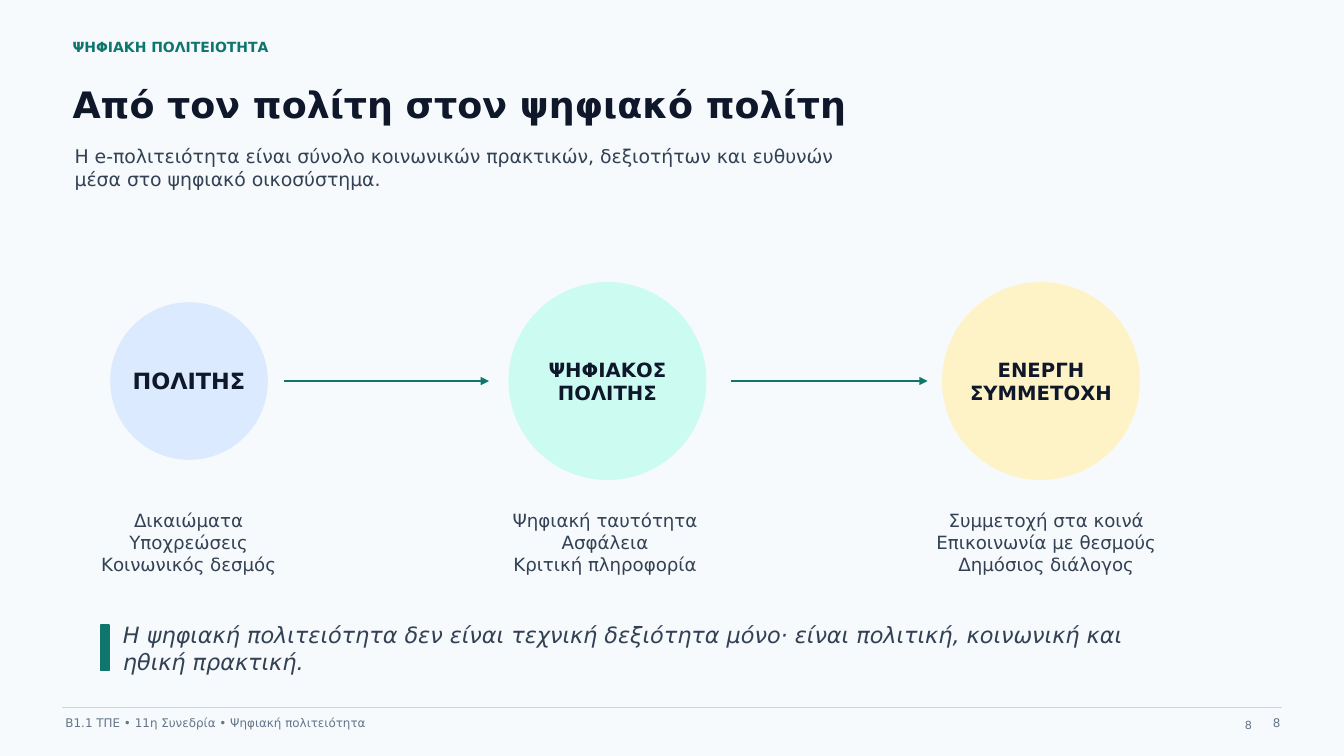
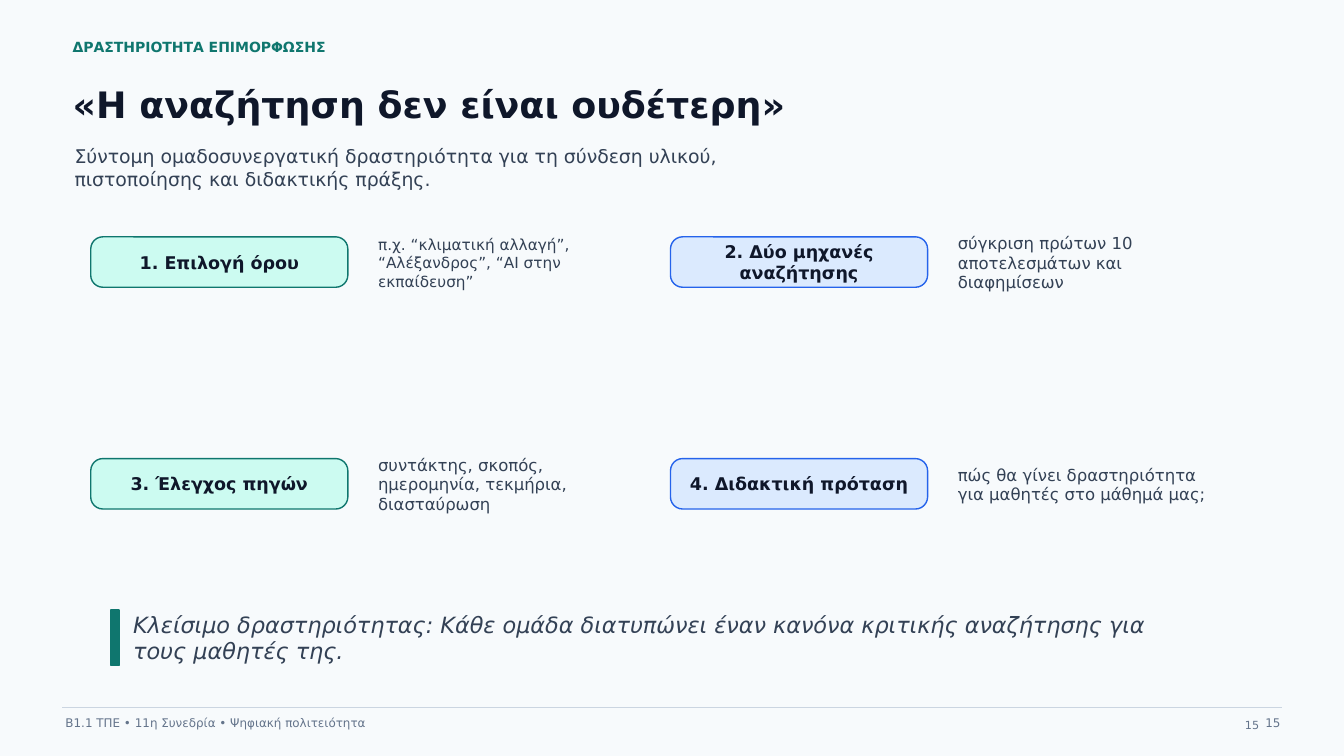
from lxml.etree import SubElement
from pptx import Presentation
from pptx.dml.color import RGBColor
from pptx.enum.shapes import MSO_CONNECTOR, MSO_SHAPE
from pptx.enum.text import MSO_ANCHOR, MSO_AUTO_SIZE, PP_ALIGN
from pptx.oxml.ns import qn
from pptx.util import Inches, Pt

FONT = "DejaVu Sans"
PAPER = RGBColor(0xF7, 0xFA, 0xFC)
INK = RGBColor(0x0F, 0x17, 0x2A)
SLATE = RGBColor(0x33, 0x41, 0x55)
MUTED = RGBColor(0x64, 0x74, 0x8B)
RULE = RGBColor(0xCB, 0xD5, 0xE1)
TEAL = RGBColor(0x0F, 0x76, 0x6E)
BLUE = RGBColor(0x25, 0x63, 0xEB)
MINT = RGBColor(0xCC, 0xFB, 0xF1)
SKY = RGBColor(0xDB, 0xEA, 0xFE)
CREAM = RGBColor(0xFE, 0xF3, 0xC7)

FOOTER = "Β1.1 ΤΠΕ • 11η Συνεδρία • Ψηφιακή πολιτειότητα"

CITIZEN = {
    "number": "8",
    "section": "ΨΗΦΙΑΚΗ ΠΟΛΙΤΕΙΟΤΗΤΑ",
    "title": "Από τον πολίτη στον ψηφιακό πολίτη",
    "lead": "Η e-πολιτειότητα είναι σύνολο κοινωνικών πρακτικών, δεξιοτήτων και ευθυνών "
            "μέσα στο ψηφιακό οικοσύστημα.",
    "quote": "Η ψηφιακή πολιτειότητα δεν είναι τεχνική δεξιότητα μόνο· είναι πολιτική, "
             "κοινωνική και ηθική πρακτική.",
}
# label lines, text size, fill, circle left, diameter, caption lines, caption left, caption width
STAGES = [
    (["ΠΟΛΙΤΗΣ"], 16, SKY, 1.1, 1.55,
     ["Δικαιώματα", "Υποχρεώσεις", "Κοινωνικός δεσμός"], 0.82, 2.1),
    (["ΨΗΦΙΑΚΟΣ", "ΠΟΛΙΤΗΣ"], 14, MINT, 5.05, 1.95,
     ["Ψηφιακή ταυτότητα", "Ασφάλεια", "Κριτική πληροφορία"], 4.85, 2.3),
    (["ΕΝΕΡΓΗ", "ΣΥΜΜΕΤΟΧΗ"], 14, CREAM, 9.35, 1.95,
     ["Συμμετοχή στα κοινά", "Επικοινωνία με θεσμούς", "Δημόσιος διάλογος"], 9.15, 2.45),
]
ARROWS = [(2.82, 4.85), (7.25, 9.2)]
FLOW_MIDDLE = 3.78

ACTIVITY = {
    "number": "15",
    "section": "ΔΡΑΣΤΗΡΙΟΤΗΤΑ ΕΠΙΜΟΡΦΩΣΗΣ",
    "title": "«Η αναζήτηση δεν είναι ουδέτερη»",
    "lead": "Σύντομη ομαδοσυνεργατική δραστηριότητα για τη σύνδεση υλικού, "
            "πιστοποίησης και διδακτικής πράξης.",
    "quote": "Κλείσιμο δραστηριότητας: Κάθε ομάδα διατυπώνει έναν κανόνα κριτικής "
             "αναζήτησης για τους μαθητές της.",
}
STEPS = [
    ("1. Επιλογή όρου", "π.χ. “κλιματική αλλαγή”, “Αλέξανδρος”, “AI στην εκπαίδευση”", 10.9),
    ("2. Δύο μηχανές αναζήτησης", "σύγκριση πρώτων 10 αποτελεσμάτων και διαφημίσεων", 11.8),
    ("3. Έλεγχος πηγών", "συντάκτης, σκοπός, ημερομηνία, τεκμήρια, διασταύρωση", 11.8),
    ("4. Διδακτική πρόταση", "πώς θα γίνει δραστηριότητα για μαθητές στο μάθημά μας;", 11.8),
]
STEP_COLOURS = [(MINT, TEAL), (SKY, BLUE)]
GRID_LEFT, GRID_TOP, COLUMN_PITCH, ROW_PITCH = 0.9, 2.35, 5.75, 2.2
STEP_WIDTH, STEP_HEIGHT, NOTE_OFFSET = 2.55, 0.5, 2.85


def write(shape, lines, size, colour, bold=False, italic=False,
          align=PP_ALIGN.LEFT, inset=0, wrap=True):
    frame = shape.text_frame
    frame.auto_size = MSO_AUTO_SIZE.NONE
    frame.word_wrap = wrap
    frame.vertical_anchor = MSO_ANCHOR.MIDDLE
    frame.margin_left = frame.margin_right = Inches(inset)
    frame.margin_top = frame.margin_bottom = 0
    for index, line in enumerate(lines):
        para = frame.paragraphs[0] if index == 0 else frame.add_paragraph()
        para.alignment = align
        span = para.add_run()
        span.text = line
        span.font.name = FONT
        span.font.size = Pt(size)
        span.font.bold = bold
        span.font.italic = italic
        span.font.color.rgb = colour


def add_text(page, place, lines, size, colour, **style):
    box = page.shapes.add_textbox(*map(Inches, place))
    write(box, lines, size, colour, **style)
    return box


def add_box(page, kind, place, fill, outline):
    box = page.shapes.add_shape(kind, *map(Inches, place))
    box.shadow.inherit = False
    box.fill.solid()
    box.fill.fore_color.rgb = fill
    box.line.color.rgb = outline
    box.line.width = Pt(1)
    return box


def add_line(page, start, end, y, colour, width, arrow=False):
    line = page.shapes.add_connector(
        MSO_CONNECTOR.STRAIGHT, Inches(start), Inches(y), Inches(end), Inches(y))
    line.line.color.rgb = colour
    line.line.width = Pt(width)
    if arrow:
        SubElement(line.line._get_or_add_ln(), qn("a:tailEnd"), type="triangle")
    SubElement(line._element.spPr, qn("a:effectLst"))


def add_page(deck, content):
    """Add a slide with the section, title, lead and footer that all slides share."""
    page = deck.slides.add_slide(deck.slide_layouts.get_by_name("Title Only"))
    title = page.shapes.title
    title.left, title.top, title.width, title.height = map(Inches, (0.72, 0.72, 7.8, 0.62))
    write(title, [content["title"]], 26, INK, bold=True)
    add_text(page, (0.72, 0.34, 4.6, 0.25), [content["section"]], 10, TEAL, bold=True)
    add_text(page, (0.74, 1.42, 7.7, 0.48), [content["lead"]], 13.5, SLATE)

    add_line(page, 0.62, 12.72, 7.02, RULE, 0.8)
    add_text(page, (0.65, 7.08, 7, 0.18), [FOOTER], 8.5, MUTED)
    number = [content["number"]]
    add_text(page, (12.25, 7.08, 0.45, 0.18), number, 8.5, MUTED, align=PP_ALIGN.RIGHT)
    second = add_text(page, (12.25, 7.08, 0.87, 0.33), number, 8, MUTED, inset=0.1)
    second.text_frame.vertical_anchor = MSO_ANCHOR.TOP
    second.text_frame.margin_top = Inches(0.05)
    return page


def add_quote(page, left, top, height, text_width, text_height, text):
    add_box(page, MSO_SHAPE.RECTANGLE, (left, top, 0.08, height), TEAL, TEAL)
    add_text(page, (left + 0.22, top + 0.05, text_width, text_height),
             [text], 16, SLATE, italic=True)


def build_citizen(deck):
    page = add_page(deck, CITIZEN)
    for label, size, fill, left, diameter, caption, caption_left, caption_width in STAGES:
        top = FLOW_MIDDLE - diameter / 2
        circle = add_box(page, MSO_SHAPE.OVAL, (left, top, diameter, diameter), fill, fill)
        write(circle, label, size, INK, bold=True, align=PP_ALIGN.CENTER, wrap=False)
        add_text(page, (caption_left, 4.95, caption_width, 0.86), caption, 13, SLATE,
                 align=PP_ALIGN.CENTER)
    for start, end in ARROWS:
        add_line(page, start, end, FLOW_MIDDLE, TEAL, 1.3, arrow=True)
    add_quote(page, 1, 6.2, 0.45, 10.6, 0.35, CITIZEN["quote"])


def build_activity(deck):
    page = add_page(deck, ACTIVITY)
    for index, (label, note, note_size) in enumerate(STEPS):
        row, column = divmod(index, 2)
        left = GRID_LEFT + column * COLUMN_PITCH
        top = GRID_TOP + row * ROW_PITCH
        step = add_box(page, MSO_SHAPE.ROUNDED_RECTANGLE,
                       (left, top, STEP_WIDTH, STEP_HEIGHT), *STEP_COLOURS[column])
        step.adjustments[0] = 0.24
        write(step, [label], 12.5, INK, bold=True, align=PP_ALIGN.CENTER, inset=0.05)
        add_text(page, (left + NOTE_OFFSET, top + 0.03, STEP_WIDTH, 0.45),
                 [note], note_size, SLATE)
    add_quote(page, 1.1, 6.05, 0.55, 10.45, 0.45, ACTIVITY["quote"])


def main():
    deck = Presentation()
    deck.slide_width, deck.slide_height = Inches(13.33), Inches(7.5)
    backdrop = deck.slide_master.background.fill
    backdrop.solid()
    backdrop.fore_color.rgb = PAPER
    build_citizen(deck)
    build_activity(deck)
    deck.save("out.pptx")


if __name__ == "__main__":
    main()
